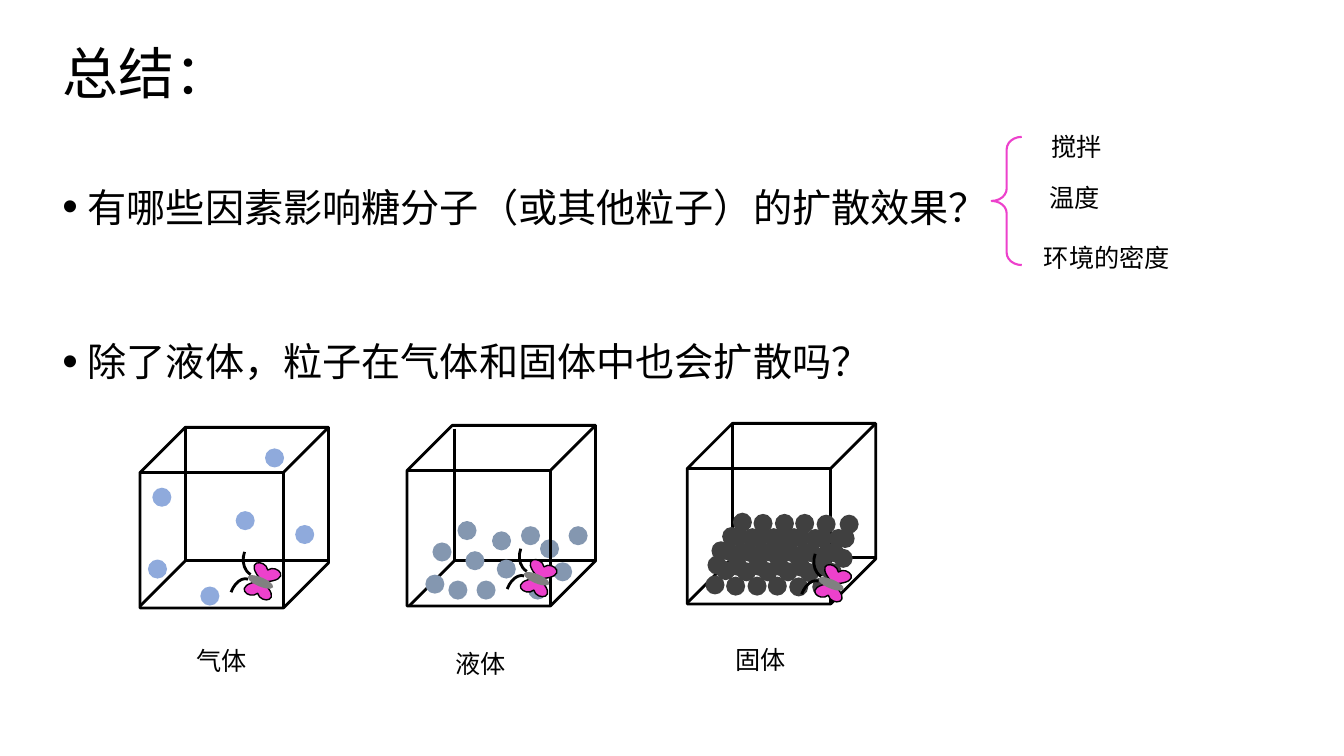
from dataclasses import dataclass
from itertools import product
from typing import Any

from lxml.etree import SubElement
from pptx import Presentation
from pptx.dml.color import RGBColor
from pptx.enum.shapes import MSO_CONNECTOR, MSO_SHAPE
from pptx.enum.text import MSO_ANCHOR, MSO_AUTO_SIZE, PP_ALIGN
from pptx.oxml.ns import qn
from pptx.util import Cm, Pt

FONT = "Noto Sans CJK SC"
COLOURS = {
    "ink": "000000",
    "gas": "8FAADC",
    "liquid": "8497B0",
    "solid": "404040",
    "pink": "ED41CC",
    "body": "808080",
}
Point = tuple[float, float]
DOT_SIZE = 0.48
CUBE_SIZE = (4.75, 4.55)
HIDDEN_EDGES = [
    ((1.14, 0.03), (1.14, 3.33)),
    ((1.12, 3.35), (4.72, 3.35)),
    ((0, 4.5), (1.17, 3.33)),
]


@dataclass
class Vessel:
    name: str
    colour: str
    cube: Point
    edges: Point
    butterfly: Point
    label: Point
    dots: list[Point]


@dataclass
class ButterflyPart:
    kind: Any
    at: Point
    size: Point
    turn: float
    fill: str | None
    line: float
    mirrored: bool = False
    adjustments: tuple[float, ...] = ()


@dataclass
class Label:
    text: str
    at: Point
    width: float = 1.8


BUTTERFLY = [
    ButterflyPart(MSO_SHAPE.HEART, (0.53, 0.99), (0.71, 0.43), 197.9, "pink", 1),
    ButterflyPart(MSO_SHAPE.HEART, (0.71, 0.61), (0.71, 0.43), 22.8, "pink", 1),
    ButterflyPart(MSO_SHAPE.OVAL, (0.58, 0.91), (0.69, 0.23), 22.8, "body", 0),
    ButterflyPart(MSO_SHAPE.ARC, (0.41, 0), (0.99, 0.81), 289.7, None, 2, True, (162, 211.18)),
    ButterflyPart(MSO_SHAPE.ARC, (0, 1.09), (0.91, 0.58), 289.7, None, 2),
]

SOLID_LAYERS = [(17.78, 14.5), (17.83, 14), (17.93, 13.64)]
SOLID_COLUMNS = [(0, 0), (0.52, 0.03), (1.06, 0.03), (1.57, 0.03), (2.11, 0.05), (2.69, 0.05)]
SOLID_DOTS = [
    (x + row * 0.27 + across, y - row * 0.36 + down)
    for (x, y), row, (across, down) in product(SOLID_LAYERS, range(3), SOLID_COLUMNS)
]
GAS_DOTS = [(7.44, 13.23), (3.73, 14.1), (3.84, 12.29), (5.05, 14.78), (6.68, 11.3), (5.94, 12.88)]
LIQUID_DOTS = [
    (14.33, 13.26), (10.72, 14.48), (12.01, 14.63), (10.9, 13.67),
    (12.4, 13.39), (12.52, 14.1), (13.31, 14.63), (13.94, 14.17),
    (11.53, 13.13), (11.73, 13.89), (11.3, 14.63), (13.13, 13.26),
]
DOT_BEHIND_CUBE = (13.61, 13.59)
VESSELS = [
    Vessel("气体", "gas", (3.53, 10.77), (3.53, 10.77), (5.64, 13.64), (4.7, 16.13), GAS_DOTS),
    Vessel("液体", "liquid", (10.26, 10.72), (10.31, 10.77), (12.6, 13.56), (11.23, 16.21), LIQUID_DOTS),
    Vessel("固体", "solid", (17.32, 10.67), (17.32, 10.69), (20.02, 13.69), (18.29, 16.1), SOLID_DOTS),
]
FACTORS = [
    Label("搅拌", (26.24, 3.18)),
    Label("温度", (26.19, 4.47)),
    Label("环境的密度", (26.06, 5.97), 3.71),
]
QUESTIONS = [
    ("有哪些因素影响糖分子（或其他粒子）的扩散效果？", 0),
    ("除了液体，粒子在气体和固体中也会扩散吗？", 60),
]


def colour(name: str) -> RGBColor:
    return RGBColor.from_string(COLOURS[name])


def set_values(target: Any, values: dict[str, Any]) -> None:
    for name, value in values.items():
        setattr(target, name, value)


def write(para: Any, text: str, size: float) -> None:
    span = para.add_run()
    span.text = text
    set_values(span.font, {"size": Pt(size), "name": FONT})
    span.font.color.rgb = colour("ink")
    latin = span.font._element.find(qn("a:latin"))
    east_asian = latin.makeelement(qn("a:ea"), {"typeface": FONT})
    latin.addnext(east_asian)


def draw_shape(
    shapes: Any, kind: Any, at: Point, size: Point,
    fill: str | None = None, line: str | None = None, weight: float = 0,
) -> Any:
    shape = shapes.add_shape(kind, *(Cm(length) for length in (*at, *size)))
    shape.shadow.inherit = False
    if fill:
        shape.fill.solid()
        shape.fill.fore_color.rgb = colour(fill)
    else:
        shape.fill.background()
    if line:
        shape.line.color.rgb = colour(line)
        shape.line.width = Pt(weight)
    else:
        shape.line.fill.background()
    return shape


def draw_dot(page: Any, at: Point, fill: str) -> None:
    draw_shape(page.shapes, MSO_SHAPE.OVAL, at, (DOT_SIZE, DOT_SIZE), fill)


def draw_edge(page: Any, origin: Point, start: Point, end: Point) -> None:
    ends = [Cm(origin[axis] + point[axis]) for point in (start, end) for axis in (0, 1)]
    edge = page.shapes.add_connector(MSO_CONNECTOR.STRAIGHT, *ends)
    edge.line.color.rgb = colour("ink")
    edge.line.width = Pt(2)
    SubElement(edge._element.spPr, qn("a:effectLst"))


def draw_butterfly(page: Any, origin: Point) -> None:
    group = page.shapes.add_group_shape()
    for part in BUTTERFLY:
        at = (origin[0] + part.at[0], origin[1] + part.at[1])
        outline = "ink" if part.line else None
        shape = draw_shape(group.shapes, part.kind, at, part.size, part.fill, outline, part.line)
        shape.rotation = part.turn
        for index, value in enumerate(part.adjustments):
            shape.adjustments[index] = value
        if part.mirrored:
            shape._element.spPr.find(qn("a:xfrm")).set("flipH", "1")


def draw_label(page: Any, label: Label) -> None:
    box = page.shapes.add_textbox(*(Cm(length) for length in (*label.at, label.width, 1.02)))
    set_values(box.text_frame, {"word_wrap": False, "auto_size": MSO_AUTO_SIZE.SHAPE_TO_FIT_TEXT})
    write(box.text_frame.paragraphs[0], label.text, 18)


def write_title(page: Any) -> None:
    title = page.shapes.title
    set_values(title, {"left": Cm(1.32), "top": Cm(0.69), "width": Cm(13.06), "height": Cm(2.49)})
    title.text_frame.vertical_anchor = MSO_ANCHOR.MIDDLE
    para = title.text_frame.paragraphs[0]
    set_values(para, {"alignment": PP_ALIGN.LEFT, "line_spacing": 0.9})
    write(para, "总结：", 40)


def write_questions(page: Any) -> None:
    box = page.shapes.add_textbox(Cm(1.32), Cm(3.89), Cm(31.37), Cm(7.04))
    box.text_frame.word_wrap = True
    for index, (text, gap) in enumerate(QUESTIONS):
        para = box.text_frame.add_paragraph() if index else box.text_frame.paragraphs[0]
        set_values(para, {"line_spacing": 1.5, "space_before": Pt(gap)})
        properties = para._element.get_or_add_pPr()
        properties.set("marL", str(Cm(0.64)))
        properties.set("indent", str(Cm(-0.64)))
        SubElement(properties, qn("a:buSzPct"), val="113000")
        SubElement(properties, qn("a:buFont"), typeface="Arial")
        SubElement(properties, qn("a:buChar"), char="•")
        write(para, text, 28)


def draw_vessel(page: Any, vessel: Vessel) -> None:
    draw_shape(page.shapes, MSO_SHAPE.CUBE, vessel.cube, CUBE_SIZE, None, "ink", 2)
    for start, end in HIDDEN_EDGES:
        draw_edge(page, vessel.edges, start, end)
    for dot in vessel.dots:
        draw_dot(page, dot, vessel.colour)
    draw_butterfly(page, vessel.butterfly)
    draw_label(page, Label(vessel.name, vessel.label))


def main() -> None:
    deck = Presentation()
    set_values(deck, {"slide_width": Cm(33.87), "slide_height": Cm(19.05)})
    page = deck.slides.add_slide(deck.slide_layouts[5])
    write_title(page)
    write_questions(page)
    draw_dot(page, DOT_BEHIND_CUBE, "liquid")
    for vessel in VESSELS:
        draw_vessel(page, vessel)
    brace = draw_shape(page.shapes, MSO_SHAPE.LEFT_BRACE, (24.99, 3.45), (0.76, 3.23), None, "pink", 1.5)
    brace.adjustments[0] = 0.41
    for factor in FACTORS:
        draw_label(page, factor)
    deck.save("out.pptx")


if __name__ == "__main__":
    main()
